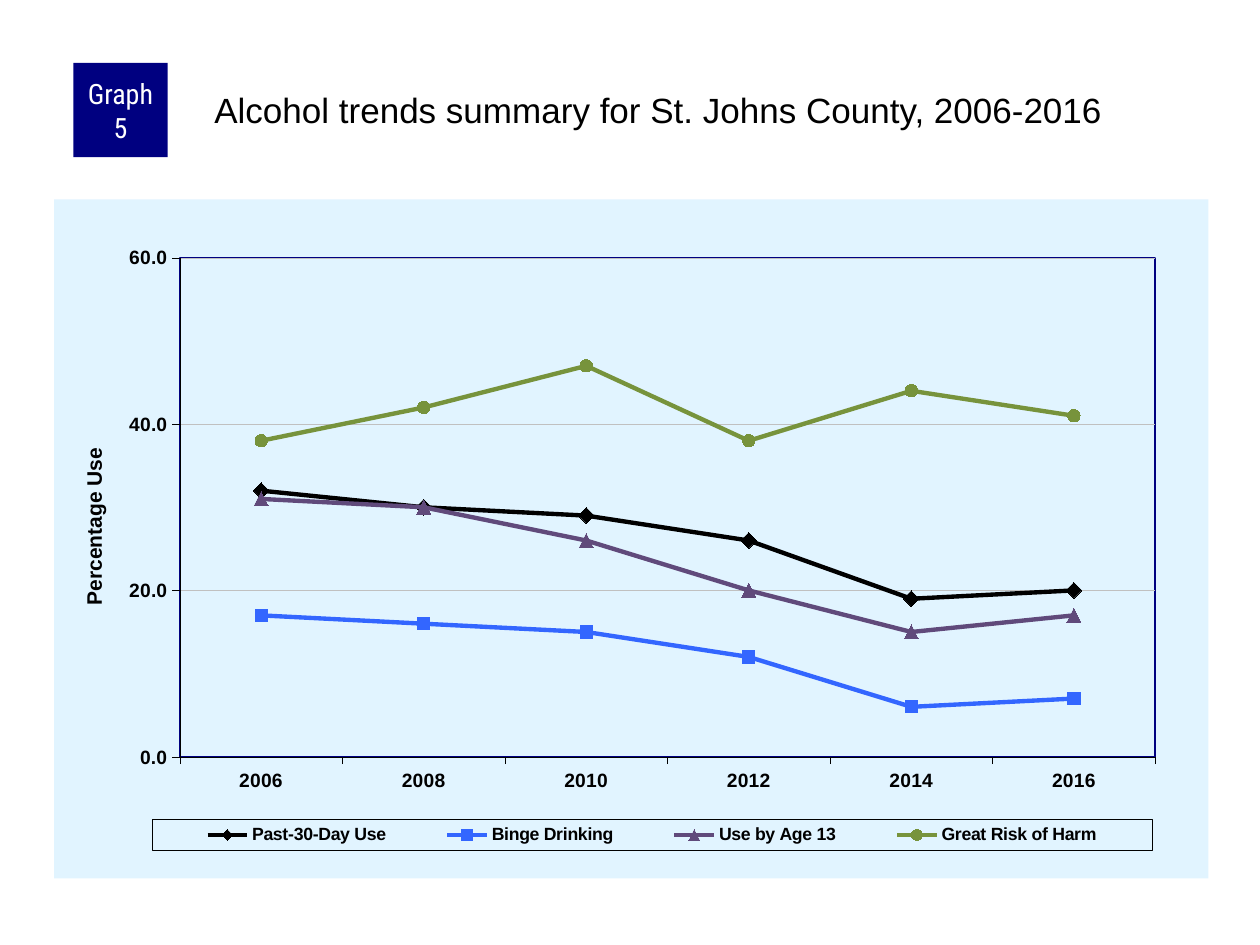
from dataclasses import dataclass

from lxml import etree
from pptx import Presentation
from pptx.chart.data import CategoryChartData
from pptx.dml.color import RGBColor
from pptx.enum.chart import XL_CHART_TYPE, XL_LEGEND_POSITION, XL_MARKER_STYLE, XL_TICK_MARK
from pptx.enum.shapes import MSO_SHAPE
from pptx.enum.text import MSO_ANCHOR, MSO_AUTO_SIZE, PP_ALIGN
from pptx.oxml import parse_xml
from pptx.oxml.ns import nsdecls, qn
from pptx.util import Cm, Pt

LINE_MARKERS = XL_CHART_TYPE.LINE_MARKERS
LEGEND_BOTTOM = XL_LEGEND_POSITION.BOTTOM
DIAMOND, SQUARE = XL_MARKER_STYLE.DIAMOND, XL_MARKER_STYLE.SQUARE
TRIANGLE, CIRCLE = XL_MARKER_STYLE.TRIANGLE, XL_MARKER_STYLE.CIRCLE
TICK_OUTSIDE = XL_TICK_MARK.OUTSIDE
RECTANGLE = MSO_SHAPE.RECTANGLE
TOP, MIDDLE = MSO_ANCHOR.TOP, MSO_ANCHOR.MIDDLE
LEFT, CENTER = PP_ALIGN.LEFT, PP_ALIGN.CENTER
NO_AUTO_SIZE = MSO_AUTO_SIZE.NONE
TITLE_ONLY_LAYOUT = 5


@dataclass(frozen=True)
class Theme:
    black: str = "000000"
    white: str = "FFFFFF"
    navy: str = "000080"
    chart_fill: str = "E1F4FF"
    grid: str = "C0C0C0"
    blue: str = "3366FF"
    purple: str = "604A7B"
    green: str = "77933C"
    font: str = "Arial"
    badge_font: str = "Roboto Condensed"
    title_size: float = 20
    badge_size: float = 16
    axis_title_size: float = 12
    axis_size: float = 11
    legend_size: float = 10.1
    chart_size: float = 8
    thin_line: float = 0.25
    series_line: float = 2.5


THEME = Theme()


@dataclass(frozen=True)
class Trend:
    name: str
    values: tuple[float, ...]
    color: str
    marker: XL_MARKER_STYLE
    marker_size: int


YEARS = ("2006", "2008", "2010", "2012", "2014", "2016")
TRENDS = (
    Trend("Past-30-Day Use", (32, 30, 29, 26, 19, 20), THEME.black, DIAMOND, 9),
    Trend("Binge Drinking", (17, 16, 15, 12, 6, 7), THEME.blue, SQUARE, 7),
    Trend("Use by Age 13", (31, 30, 26, 20, 15, 17), THEME.purple, TRIANGLE, 8),
    Trend("Great Risk of Harm", (38, 42, 47, 38, 44, 41), THEME.green, CIRCLE, 7),
)


def set_font(font, size: float, color: str, name: str = THEME.font, bold: bool = False) -> None:
    font.name, font.size, font.bold = name, Pt(size), bold
    font.color.rgb = RGBColor.from_string(color)


def set_line(line, color: str, width: float) -> None:
    line.color.rgb = RGBColor.from_string(color)
    line.width = Pt(width)


def set_fill(fill, color: str) -> None:
    fill.solid()
    fill.fore_color.rgb = RGBColor.from_string(color)


def set_insets(frame, left: float, top: float, right: float) -> None:
    frame.margin_left, frame.margin_top = Cm(left), Cm(top)
    frame.margin_right, frame.margin_bottom = Cm(right), Cm(0)


def set_layout(element, index: int, inner: bool = False, **fractions: float) -> None:
    """Place a chart part by fractions of the chart; index is where c:layout belongs."""
    for old_layout in element.findall(qn("c:layout")):
        element.remove(old_layout)
    layout = parse_xml(f"<c:layout {nsdecls('c')}><c:manualLayout/></c:layout>")
    settings = {"layoutTarget": "inner"} if inner else {}
    settings |= {"xMode": "edge", "yMode": "edge"} | fractions
    for tag, value in settings.items():
        etree.SubElement(layout[0], qn(f"c:{tag}")).set("val", str(value))
    element.insert(index, layout)


def shape_properties(fill: str | None, line: str | None, width: float = 0):
    """Make a c:spPr element, for chart parts without a format property."""
    def paint(color: str | None) -> str:
        if color is None:
            return "<a:noFill/>"
        return f'<a:solidFill><a:srgbClr val="{color}"/></a:solidFill>'

    return parse_xml(f"<c:spPr {nsdecls('c', 'a')}>{paint(fill)}"
                     f'<a:ln w="{Pt(width)}">{paint(line)}</a:ln></c:spPr>')


def add_badge(slide) -> None:
    badge = slide.shapes.add_shape(RECTANGLE, Cm(1.48), Cm(1.27), Cm(1.9), Cm(1.9))
    badge.shadow.inherit = False
    set_fill(badge.fill, THEME.navy)
    badge.line.fill.background()
    frame = badge.text_frame
    frame.word_wrap, frame.vertical_anchor = True, MIDDLE
    set_insets(frame, 0.13, 0, 0.13)
    paragraph = frame.paragraphs[0]
    paragraph.text, paragraph.alignment = "Graph 5", CENTER
    set_font(paragraph.font, THEME.badge_size, THEME.white, THEME.badge_font)


def fill_title(slide) -> None:
    title = slide.shapes.title
    title.left, title.top, title.width, title.height = Cm(4.24), Cm(1.7), Cm(20.12), Cm(2.11)
    frame = title.text_frame
    frame.word_wrap, frame.auto_size, frame.vertical_anchor = True, NO_AUTO_SIZE, TOP
    set_insets(frame, 0.08, 0.08, 0)
    paragraph = frame.paragraphs[0]
    paragraph.text = "Alcohol trends summary for St. Johns County, 2006-2016"
    paragraph.alignment = LEFT
    set_font(paragraph.font, THEME.title_size, THEME.black)


def format_axes(chart) -> None:
    for axis in (chart.category_axis, chart.value_axis):
        axis.major_tick_mark = TICK_OUTSIDE
        set_line(axis.format.line, THEME.black, THEME.thin_line)
        set_font(axis.tick_labels.font, THEME.axis_size, THEME.black, bold=True)
    axis = chart.value_axis
    axis.minimum_scale, axis.maximum_scale, axis.major_unit = 0, 60, 20
    axis.tick_labels.number_format = "0.0"
    axis.tick_labels.number_format_is_linked = False
    set_line(axis.major_gridlines.format.line, THEME.grid, THEME.thin_line)
    paragraph = axis.axis_title.text_frame.paragraphs[0]
    paragraph.text = "Percentage Use"
    set_font(paragraph.font, THEME.axis_title_size, THEME.black, bold=True)
    title = chart.element.find(".//" + qn("c:valAx")).find(qn("c:title"))
    title.find(".//" + qn("a:bodyPr")).set("rot", "-5400000")
    set_layout(title, 1, x=0.02, y=0.36)


def format_series(chart) -> None:
    for series, trend in zip(chart.plots[0].series, TRENDS):
        series.smooth = False
        set_line(series.format.line, trend.color, THEME.series_line)
        series.marker.style, series.marker.size = trend.marker, trend.marker_size
        set_fill(series.marker.format.fill, trend.color)
        set_line(series.marker.format.line, trend.color, THEME.thin_line)


def format_legend(chart) -> None:
    chart.has_legend = True
    chart.legend.position, chart.legend.include_in_layout = LEGEND_BOTTOM, False
    set_font(chart.legend.font, THEME.legend_size, THEME.black, bold=True)
    legend = chart.element.find(".//" + qn("c:legend"))
    set_layout(legend, 1, x=0.085, y=0.913, w=0.866, h=0.046)
    border = shape_properties(None, THEME.black, THEME.thin_line)
    legend.find(qn("c:overlay")).addnext(border)


def add_trend_chart(slide) -> None:
    data = CategoryChartData()
    data.categories = YEARS
    for trend in TRENDS:
        data.add_series(trend.name, trend.values)
    frame = slide.shapes.add_chart(LINE_MARKERS, Cm(1.09), Cm(4.02), Cm(23.27), Cm(13.69), data)
    chart = frame.chart
    chart.has_title = False
    chart.plots[0].vary_by_categories = False
    set_font(chart.font, THEME.chart_size, THEME.black)
    format_axes(chart)
    format_series(chart)
    format_legend(chart)
    background = shape_properties(THEME.chart_fill, None)
    chart.element.find(qn("c:chart")).addnext(background)
    plot_area = chart.element.find(".//" + qn("c:plotArea"))
    set_layout(plot_area, 0, inner=True, x=0.109, y=0.086, w=0.845, h=0.735)
    plot_area.append(shape_properties(None, THEME.navy, 1))


def main() -> None:
    presentation = Presentation()
    presentation.slide_width, presentation.slide_height = Cm(25.4), Cm(19.05)
    slide = presentation.slides.add_slide(presentation.slide_layouts[TITLE_ONLY_LAYOUT])
    add_badge(slide)
    fill_title(slide)
    add_trend_chart(slide)
    presentation.save("out.pptx")


if __name__ == "__main__":
    main()
